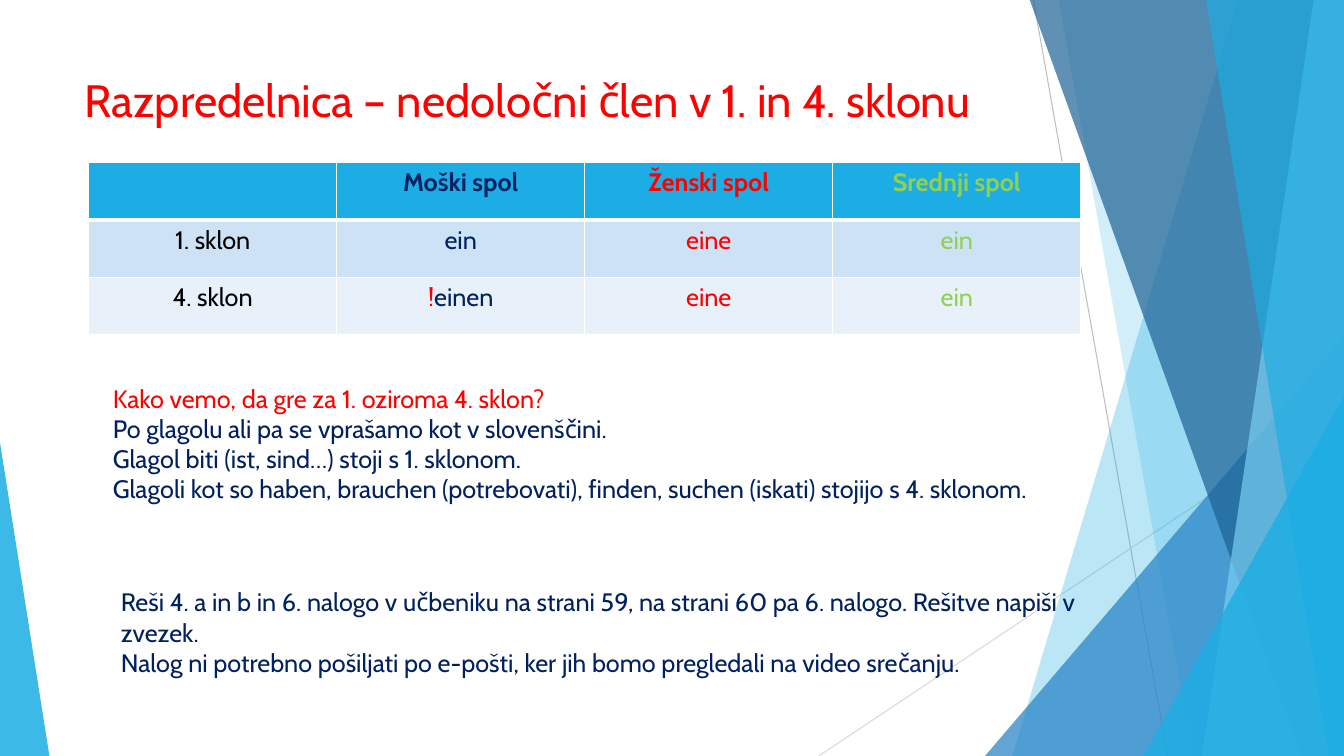
"""Build a slide on the German indefinite article in the 1st and 4th case."""
from lxml import etree
from pptx import Presentation
from pptx.dml.color import RGBColor
from pptx.enum.shapes import MSO_CONNECTOR, MSO_SHAPE
from pptx.enum.text import MSO_ANCHOR, PP_ALIGN
from pptx.oxml.ns import qn
from pptx.util import Inches, Pt

STRAIGHT = MSO_CONNECTOR.STRAIGHT
TRIANGLE = MSO_SHAPE.ISOSCELES_TRIANGLE
TOP = MSO_ANCHOR.TOP
LEFT, CENTER = PP_ALIGN.LEFT, PP_ALIGN.CENTER

WIDTH, HEIGHT = 13.33, 7.5
BAND_TOP = -0.01
FONT = "Cabin"
COLORS = {
    "red": "FF0000", "navy": "002060", "green": "92D050", "black": "000000",
    "white": "FFFFFF", "sky": "1CADE4", "blue": "2683C6", "deep": "1D6294",
    "pale": "77CEEF", "row_dark": "CDE3F5", "row_light": "E8F1FA",
    "gray": "BFBFBF", "light_gray": "D9D9D9",
}

RAYS = [
    ((10.25, 0), (11.58, HEIGHT), "gray"),
    ((WIDTH, 4.03), (8.12, HEIGHT), "light_gray"),
]
# kind, geometry, colour, opacity in percent
FACETS = [
    ("band", (12.28, 10.04), "sky", 30),
    ("band", (10.5, 11.83), "sky", 20),
    ("corner", (9.77, 3.33, 3.56, 1), "blue", 72),
    ("band", (10.21, 12.91), "deep", 70),
    ("band", (13.03, 11.92), "pale", 70),
    ("band", (11.96, 13.18), "sky", 65),
    ("corner", (11.34, 3.93, 1.99, 1), "sky", 80),
    ("corner", (0, 4.39, 0.49, 0), "sky", 85),
]

TEXTS = [
    ((0.74, 0.67, 10.14, 0.84), 32.4, [
        ("Razpredelnica – nedoločni člen v 1. in 4. sklonu", "red"),
    ]),
    ((1.02, 3.75, 9.45, 1.62), 18, [
        ("Kako vemo, da gre za 1. oziroma 4. sklon?", "red"),
        ("Po glagolu ali pa se vprašamo kot v slovenščini.", "navy"),
        ("Glagol biti (ist, sind…) stoji s 1. sklonom.", "navy"),
        ("Glagoli kot so haben, brauchen (potrebovati), finden, suchen (iskati) "
         "stojijo s 4. sklonom.", "navy"),
    ]),
    ((1.1, 5.77, 9.9, 1.01), 18, [
        ("Reši 4. a in b in 6. nalogo v učbeniku na strani 59, na strani 60 pa "
         "6. nalogo. Rešitve napiši v zvezek.", "navy"),
        ("Nalog ni potrebno pošiljati po e-pošti, ker jih bomo pregledali na "
         "video srečanju.", "navy"),
    ]),
]

ARTICLES = [
    ["", "Moški spol", "Ženski spol", "Srednji spol"],
    ["1. sklon", "ein", "eine", "ein"],
    ["4. sklon", "!einen", "eine", "ein"],
]
GENDER_COLORS = ["black", "navy", "red", "green"]
ROW_FILLS = ["sky", "row_dark", "row_light"]
TABLE_LEFT, TABLE_TOP, COLUMN, ROW = 0.88, 1.61, 2.46, 0.57
FRAME_FORMAT = {"word_wrap": True, "vertical_anchor": TOP}


def rgb(name):
    return RGBColor.from_string(COLORS[name])


def write(paragraph, words, color, size, bold=False, align=LEFT):
    paragraph.alignment = align
    run = paragraph.add_run()
    run.text = words
    for key, value in {"name": FONT, "size": Pt(size), "bold": bold}.items():
        setattr(run.font, key, value)
    run.font.color.rgb = rgb(color)


def add_ray(slide, start, end, color):
    ray = slide.shapes.add_connector(STRAIGHT, *map(Inches, start + end))
    ray.line.color.rgb = rgb(color)
    ray.line.width = Pt(0.75)
    etree.SubElement(ray._element.spPr, qn("a:effectLst"))


def add_facet(slide, kind, geometry, color, opacity):
    if kind == "band":
        top_x, bottom_x = geometry
        outline = [(WIDTH, BAND_TOP), (WIDTH, HEIGHT), (bottom_x, HEIGHT)]
        builder = slide.shapes.build_freeform(Inches(top_x), Inches(BAND_TOP))
        builder.add_line_segments([(Inches(x), Inches(y)) for x, y in outline])
        facet = builder.convert_to_shape()
    else:
        left, top, width, apex = geometry
        facet = slide.shapes.add_shape(
            TRIANGLE, *map(Inches, (left, top, width, HEIGHT - top)))
        facet.adjustments[0] = apex
    facet.shadow.inherit = False
    facet.line.fill.background()
    facet.fill.solid()
    facet.fill.fore_color.rgb = rgb(color)
    tint = facet._element.spPr.find(qn("a:solidFill")).find(qn("a:srgbClr"))
    etree.SubElement(tint, qn("a:alpha"), val=str(opacity * 1000))


def add_text(slide, box, size, lines):
    frame = slide.shapes.add_textbox(*map(Inches, box)).text_frame
    for key, value in FRAME_FORMAT.items():
        setattr(frame, key, value)
    for index, (words, color) in enumerate(lines):
        paragraph = frame.add_paragraph() if index else frame.paragraphs[0]
        write(paragraph, words, color, size)


def add_borders(cell, row):
    widths = {"L": 1, "R": 1, "T": 3 if row == 1 else 1, "B": 1 if row else 3}
    properties = cell._tc.get_or_add_tcPr()
    for side, width in widths.items():
        border = etree.SubElement(properties, qn(f"a:ln{side}"), w=str(Pt(width)))
        fill = etree.SubElement(border, qn("a:solidFill"))
        etree.SubElement(fill, qn("a:srgbClr"), val=COLORS["white"])


def add_articles(slide):
    rows, columns = len(ARTICLES), len(ARTICLES[0])
    table = slide.shapes.add_table(
        rows, columns, Inches(TABLE_LEFT), Inches(TABLE_TOP),
        Inches(COLUMN * columns), Inches(ROW * rows)).table
    for r, forms in enumerate(ARTICLES):
        for c, form in enumerate(forms):
            cell = table.cell(r, c)
            add_borders(cell, r)
            cell.fill.solid()
            cell.fill.fore_color.rgb = rgb(ROW_FILLS[r])
            stem = form.lstrip("!")
            mark = form[:len(form) - len(stem)]
            for words, color in ((mark, "red"), (stem, GENDER_COLORS[c])):
                if words:
                    write(cell.text_frame.paragraphs[0], words, color, 18,
                          bold=r == 0, align=CENTER)


def main():
    deck = Presentation()
    deck.slide_width, deck.slide_height = Inches(WIDTH), Inches(HEIGHT)
    slide = deck.slides.add_slide(deck.slide_layouts[6])
    for ray in RAYS:
        add_ray(slide, *ray)
    for facet in FACETS:
        add_facet(slide, *facet)
    title, *notes = TEXTS
    add_text(slide, *title)
    add_articles(slide)
    for note in notes:
        add_text(slide, *note)
    deck.save("out.pptx")


if __name__ == "__main__":
    main()
